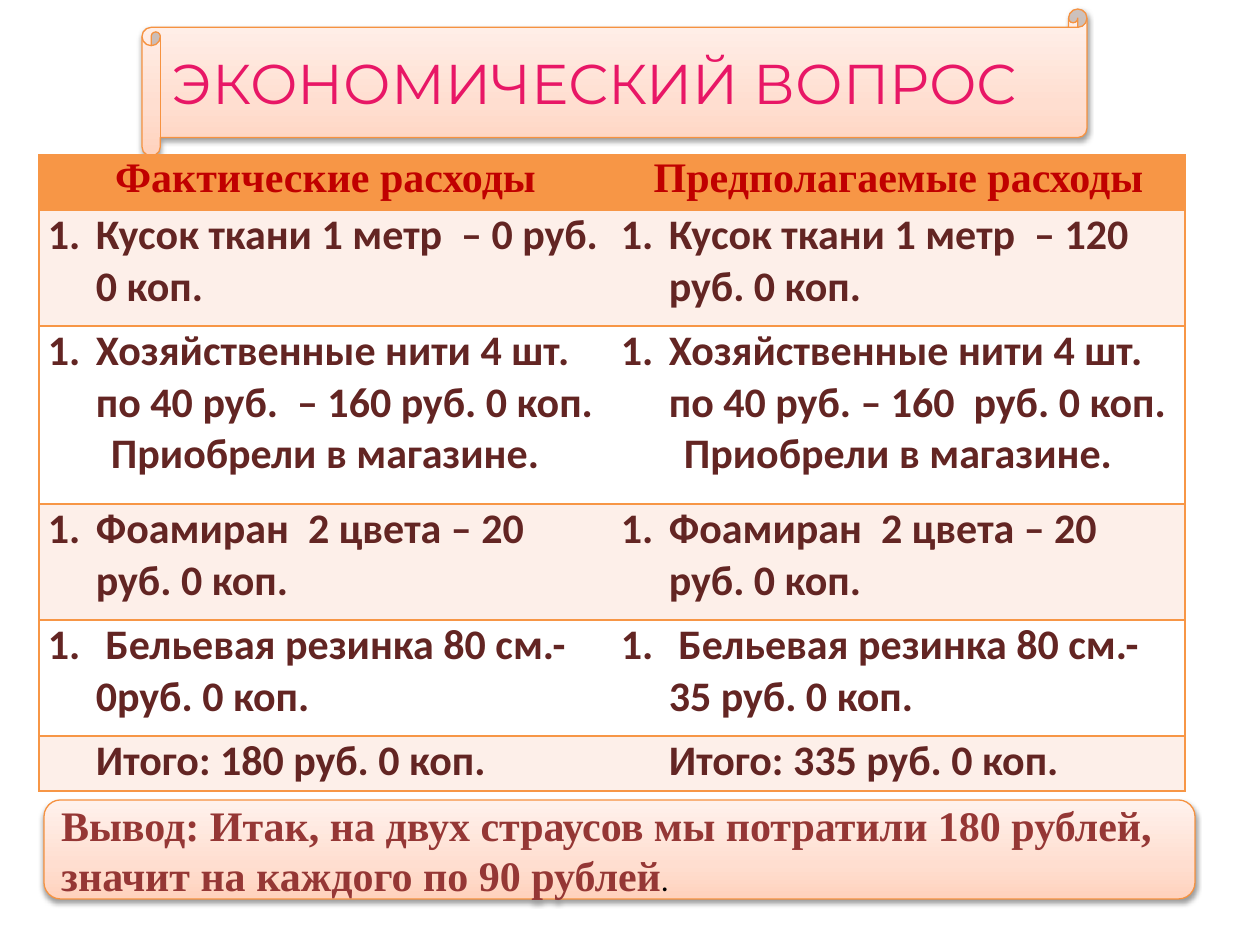
from lxml import etree
from pptx import Presentation
from pptx.dml.color import RGBColor
from pptx.enum.shapes import MSO_SHAPE
from pptx.enum.text import MSO_ANCHOR, MSO_AUTO_SIZE, PP_ALIGN
from pptx.oxml.ns import qn
from pptx.util import Pt

SCALE = 914400 / 126
SCROLL, ROUND = MSO_SHAPE.HORIZONTAL_SCROLL, MSO_SHAPE.ROUNDED_RECTANGLE
MIDDLE, NO_FIT = MSO_ANCHOR.MIDDLE, MSO_AUTO_SIZE.NONE
LEFT, CENTER = PP_ALIGN.LEFT, PP_ALIGN.CENTER
SERIF, SANS, TITLE = "Times New Roman", "Calibri", "Montserrat"

COLORS = {
    "orange": "F79646", "edge": "F69240", "band": "FDEFE9", "white": "FFFFFF",
    "red": "C00000", "brown": "632523", "wine": "953735", "black": "000000",
    "pale": "EAEAEA",
}
PEACH = [(0, "FFD2BD"), (35, "FFDED0"), (100, "FFF2ED")]
RAINBOW = [(0, "A603AB"), (12, "E81766"), (27, "EE3F17"), (48, "FFFF00"),
           (65, "1A8D48"), (79, "0819FB"), (100, "A603AB")]

HEADS = ["Фактические расходы", "Предполагаемые расходы"]
ITEMS = [
    ["Кусок ткани 1 метр  – 0 руб. 0 коп.",
     "Кусок ткани 1 метр  – 120 руб. 0 коп."],
    ["Хозяйственные нити 4 шт. по 40 руб.  – 160 руб. 0 коп.",
     "Хозяйственные нити 4 шт. по 40 руб. – 160  руб. 0 коп."],
    ["Фоамиран  2 цвета – 20 руб. 0 коп.",
     "Фоамиран  2 цвета – 20 руб. 0 коп."],
    [" Бельевая резинка 80 см.- 0руб. 0 коп.",
     " Бельевая резинка 80 см.- 35 руб. 0 коп."],
]
NOTES = {1: "Приобрели в магазине."}
TOTALS = ["Итого: 180 руб. 0 коп.", "Итого: 335 руб. 0 коп."]
ROWS = [55, 116, 178, 116, 116, 55]
COL = 573


def px(n):
    return round(n * SCALE)


def rgb(name):
    return RGBColor.from_string(COLORS[name])


def node(parent, tag, **attrs):
    return etree.SubElement(parent, qn(tag), {k: str(v) for k, v in attrs.items()})


def blend(fill, host, stops, angle):
    """Give a shape or a run a gradient with any number of stops."""
    fill.gradient()
    grad = host.find(qn("a:gradFill"))
    for child in list(grad):
        grad.remove(child)
    group = node(grad, "a:gsLst")
    for pos, color in stops:
        stop = node(group, "a:gs", pos=pos * 1000)
        node(stop, "a:srgbClr", val=color)
    node(grad, "a:lin", ang=angle * 60000, scaled=0)


def write(para, text, size=24, font=SANS, color="brown", bold=True,
          align=LEFT, left=0, after=0, number=False):
    para.alignment = align
    para.space_after = Pt(after)
    props = para._p.get_or_add_pPr()
    props.set("marL", str(px(left)))
    props.set("indent", str(px(-left if number else 0)))
    if number:
        node(props, "a:buAutoNum", type="arabicPeriod")
    run = para.add_run()
    run.text = text
    run.font.size, run.font.name, run.font.bold = Pt(size), font, bold
    run.font.color.rgb = rgb(color)
    return run


def panel(slide, kind, x, y, w, h):
    """Peach shape with a thin edge and a soft shadow."""
    shape = slide.shapes.add_shape(kind, px(x), px(y), px(w), px(h))
    blend(shape.fill, shape._element.spPr, PEACH, 270)
    shape.line.color.rgb = rgb("edge")
    shape.line.width = Pt(0.75)
    shape.shadow.inherit = False
    effects = shape._element.spPr.find(qn("a:effectLst"))
    shade = node(effects, "a:outerShdw", blurRad=Pt(3.1), dist=Pt(1.6),
                 dir=5400000, rotWithShape=0)
    node(node(shade, "a:srgbClr", val=COLORS["black"]), "a:alpha", val=38000)
    shape.text_frame.word_wrap = True
    shape.text_frame.vertical_anchor = MIDDLE
    return shape


def heading(slide):
    panel(slide, SCROLL, 142, 9, 945, 147)
    title = slide.shapes.title
    title.left, title.top, title.width, title.height = map(px, (160, 27, 909, 111))
    slide.shapes._spTree.append(title._element)  # bring in front of the scroll
    frame = title.text_frame
    frame.word_wrap, frame.auto_size, frame.vertical_anchor = True, NO_FIT, MIDDLE
    run = write(frame.paragraphs[0], "ЭКОНОМИЧЕСКИЙ ВОПРОС", size=32,
                font=TITLE, bold=False)
    props = run._r.get_or_add_rPr()
    blend(run.font.fill, props, RAINBOW, 0)
    line = etree.Element(qn("a:ln"), w=str(Pt(1)))
    node(node(line, "a:solidFill"), "a:srgbClr", val=COLORS["pale"])
    props.insert(0, line)


def style(cell, col, fill):
    """Orange outer and row borders, no line between the columns."""
    cell.margin_left = cell.margin_right = px(9)
    cell.margin_top = cell.margin_bottom = 0
    props = cell._tc.get_or_add_tcPr()
    hidden = "LR"[1 - col]
    for side in "LRTB":
        line = node(props, f"a:ln{side}", w=Pt(1))
        if side == hidden:
            node(line, "a:noFill")
        else:
            node(node(line, "a:solidFill"), "a:srgbClr", val=COLORS["orange"])
    cell.fill.solid()
    cell.fill.fore_color.rgb = rgb(fill)


def costs(slide):
    table = slide.shapes.add_table(len(ROWS), 2, px(39), px(155),
                                   px(2 * COL), px(sum(ROWS))).table
    for row, high in zip(table.rows, ROWS):
        row.height = px(high)
    for col in range(2):
        table.columns[col].width = px(COL)
        for row in range(len(ROWS)):
            fill = "orange" if row == 0 else "band" if row % 2 else "white"
            style(table.cell(row, col), col, fill)

        # Header and total
        write(table.cell(0, col).text_frame.paragraphs[0], HEADS[col],
              font=SERIF, color="red", align=CENTER, after=10)
        write(table.cell(len(ROWS) - 1, col).text_frame.paragraphs[0],
              TOTALS[col], left=48, after=10)

        # Cost items
        last = 10 * col
        for i, pair in enumerate(ITEMS):
            frame = table.cell(i + 1, col).text_frame
            write(frame.paragraphs[0], pair[col], left=48, number=True,
                  after=0 if i in NOTES else last)
            if i in NOTES:
                write(frame.add_paragraph(), NOTES[i], left=63, after=last)


def summary(slide):
    box = panel(slide, ROUND, 44, 800, 1151, 99)
    para = box.text_frame.paragraphs[0]
    write(para, "Вывод: Итак, на двух страусов мы потратили 180 рублей, "
          "значит на каждого по 90 рублей", font=SERIF, color="wine")
    write(para, ".", size=18, color="black", bold=False)


def main():
    deck = Presentation()
    deck.slide_width, deck.slide_height = px(1260), px(945)
    slide = deck.slides.add_slide(deck.slide_layouts[5])
    heading(slide)
    costs(slide)
    summary(slide)
    deck.save("out.pptx")


if __name__ == "__main__":
    main()
